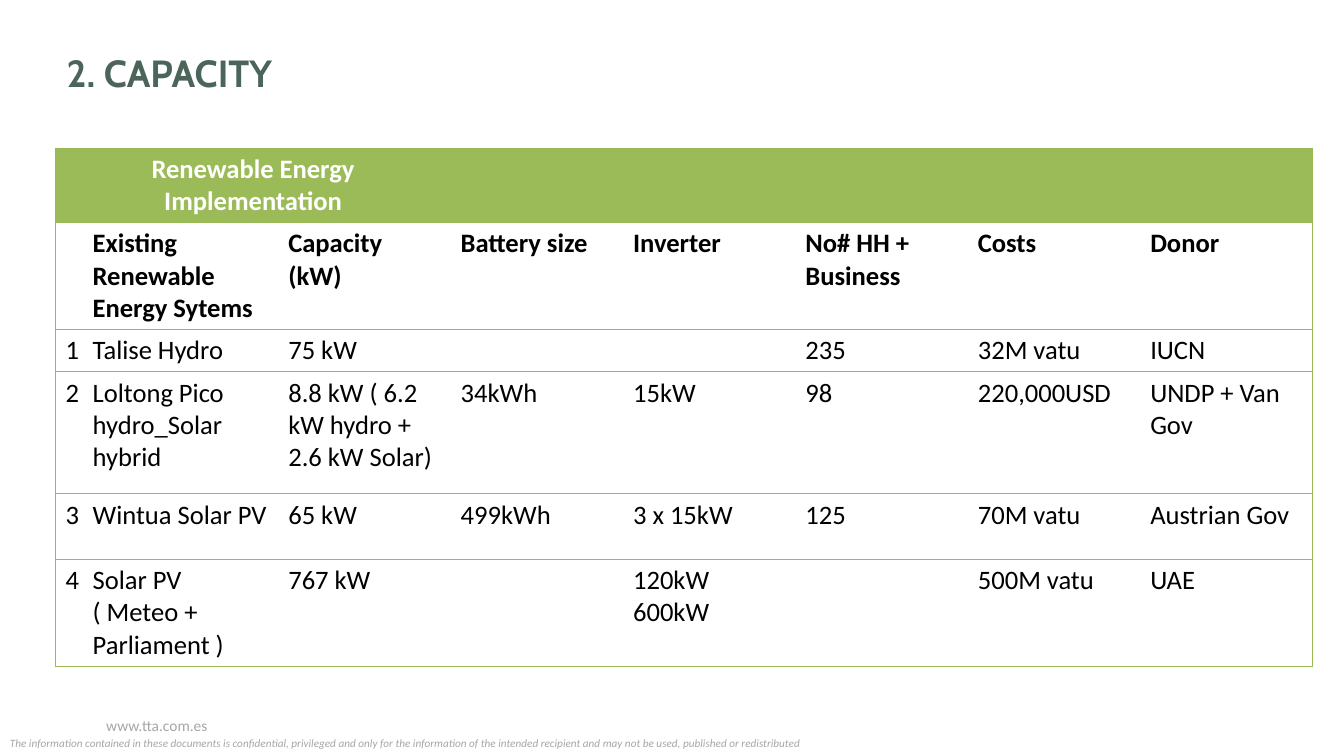
from dataclasses import dataclass

from lxml import etree
from pptx import Presentation
from pptx.dml.color import RGBColor
from pptx.enum import text as t
from pptx.oxml import ns
from pptx.util import Inches, Pt

GREEN = RGBColor(0x9B, 0xBB, 0x59)
EDGE = RGBColor(0x98, 0xB9, 0x55)
SLATE = RGBColor(0x4B, 0x65, 0x5A)
GREY = RGBColor(0xA6, 0xA6, 0xA6)
WHITE = RGBColor(0xFF, 0xFF, 0xFF)
BLACK = RGBColor(0, 0, 0)

WIDTHS = [0.27, 1.94] + [1.71] * 6
HEIGHTS = [0.74, 1.06, 0.42, 1.21, 0.65, 1.06]
ROWS = [
    ["Renewable Energy Implementation"] + [""] * 7,
    ["", "Existing Renewable Energy Sytems", "Capacity (kW)", "Battery size",
     "Inverter", "No# HH + Business", "Costs", "Donor"],
    ["1", "Talise Hydro", "75 kW", "", "", "235", "32M vatu", "IUCN"],
    ["2", "Loltong Pico hydro_Solar hybrid", "8.8 kW ( 6.2 kW hydro + 2.6 kW Solar)",
     "34kWh", "15kW", "98", "220,000USD", "UNDP + Van Gov"],
    ["3", "Wintua Solar PV", "65 kW", "499kWh", "3 x 15kW", "125", "70M vatu",
     "Austrian Gov"],
    ["4", "Solar PV ( Meteo + Parliament )", "767 kW", "", "120kW\n600kW", "",
     "500M vatu", "UAE"],
]


@dataclass
class Style:
    size: float
    color: RGBColor
    face: str = "Calibri"
    bold: bool = False
    slant: bool = False
    align: t.PP_ALIGN = t.PP_ALIGN.LEFT


@dataclass
class Note:
    words: str
    left: float
    top: float
    width: float
    height: float
    inset: float
    style: Style


NOTES = [
    Note("The information contained in these documents is confidential, privileged and "
         "only for the information of the intended recipient and may not be used, "
         "published or redistributed",
         0, 7.26, 13.33, 0.24, 0.1, Style(8, GREY, slant=True)),
    Note("www.tta.com.es", 0.32, 7.06, 2.15, 0.29, 0.42,
         Style(11, GREY, align=t.PP_ALIGN.CENTER)),
]


def write(frame, words: str, style: Style) -> None:
    frame.text = words
    for para in frame.paragraphs:
        para.alignment = style.align
        for run in para.runs:
            font = run.font
            font.name, font.size = style.face, Pt(style.size)
            font.bold, font.italic = style.bold, style.slant
            font.color.rgb = style.color


def edge(cell, side: str, shown: bool) -> None:
    props = cell._tc.get_or_add_tcPr()
    line = etree.SubElement(props, ns.qn(f"a:ln{side}"), w=str(Pt(0.75)))
    if shown:
        fill = etree.SubElement(line, ns.qn("a:solidFill"))
        etree.SubElement(fill, ns.qn("a:srgbClr"), val=str(EDGE))
    else:
        etree.SubElement(line, ns.qn("a:noFill"))


def add_note(slide, note: Note) -> None:
    box = slide.shapes.add_textbox(Inches(note.left), Inches(note.top),
                                   Inches(note.width), Inches(note.height))
    frame = box.text_frame
    frame.word_wrap = True
    frame.margin_left = Inches(note.inset)
    write(frame, note.words, note.style)


def add_title(slide) -> None:
    title = slide.shapes.title
    title.left, title.top = Inches(0.55), Inches(0.42)
    title.width, title.height = Inches(9.17), Inches(0.6)
    frame = title.text_frame
    write(frame, "2. CAPACITY", Style(27, SLATE, "Cabin", bold=True))
    frame.auto_size = t.MSO_AUTO_SIZE.NONE
    frame.vertical_anchor = t.MSO_ANCHOR.MIDDLE
    frame.margin_left = frame.margin_right = Inches(0.11)
    frame.margin_top = frame.margin_bottom = Inches(0.05)


def add_grid(slide) -> None:
    grid = slide.shapes.add_table(
        len(ROWS), len(WIDTHS), Inches(0.55), Inches(1.47),
        Inches(sum(WIDTHS)), Inches(sum(HEIGHTS))).table
    grid.first_row = grid.horz_banding = False
    for col, width in zip(grid.columns, WIDTHS):
        col.width = Inches(width)
    for row, height in zip(grid.rows, HEIGHTS):
        row.height = Inches(height)
    grid.cell(0, 0).merge(grid.cell(0, 2))
    head = Style(19, WHITE, bold=True, align=t.PP_ALIGN.CENTER)
    label = Style(19, BLACK, bold=True)
    plain = Style(19, BLACK)
    last = len(WIDTHS) - 1
    for r, row in enumerate(ROWS):
        style = (head, label)[r] if r < 2 else plain
        for c, words in enumerate(row):
            cell = grid.cell(r, c)
            if words:
                write(cell.text_frame, words, style)
            for side, shown in zip("LRTB", (c == 0, c == last, True, True)):
                edge(cell, side, shown)
            if r == 0:
                cell.fill.solid()
                cell.fill.fore_color.rgb = GREEN
            else:
                cell.fill.background()


def main() -> None:
    deck = Presentation()
    deck.slide_width, deck.slide_height = Inches(13.33), Inches(7.5)
    slide = deck.slides.add_slide(deck.slide_layouts[5])
    for note in NOTES:
        add_note(slide, note)
    add_title(slide)
    add_grid(slide)
    deck.save("out.pptx")


if __name__ == "__main__":
    main()
